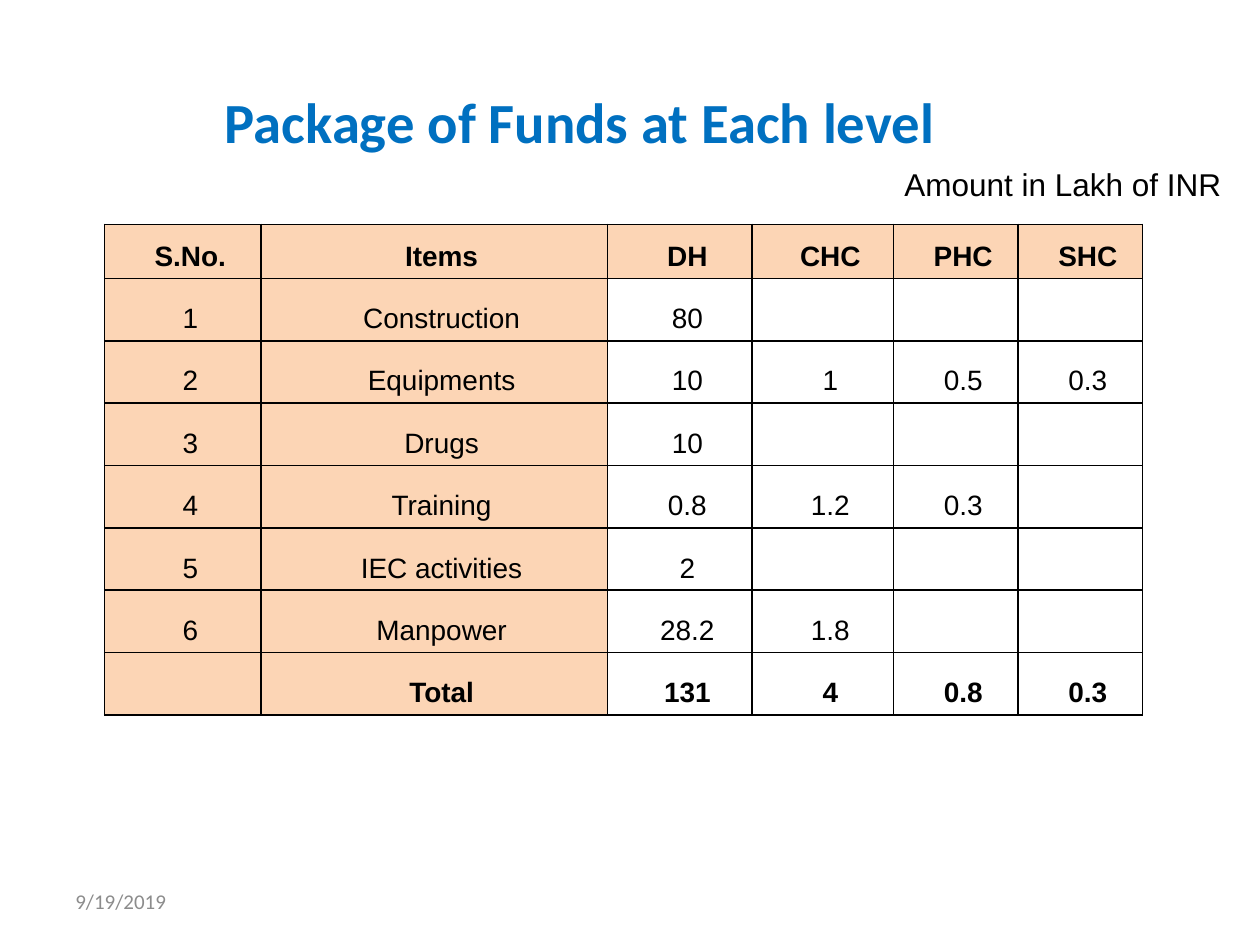
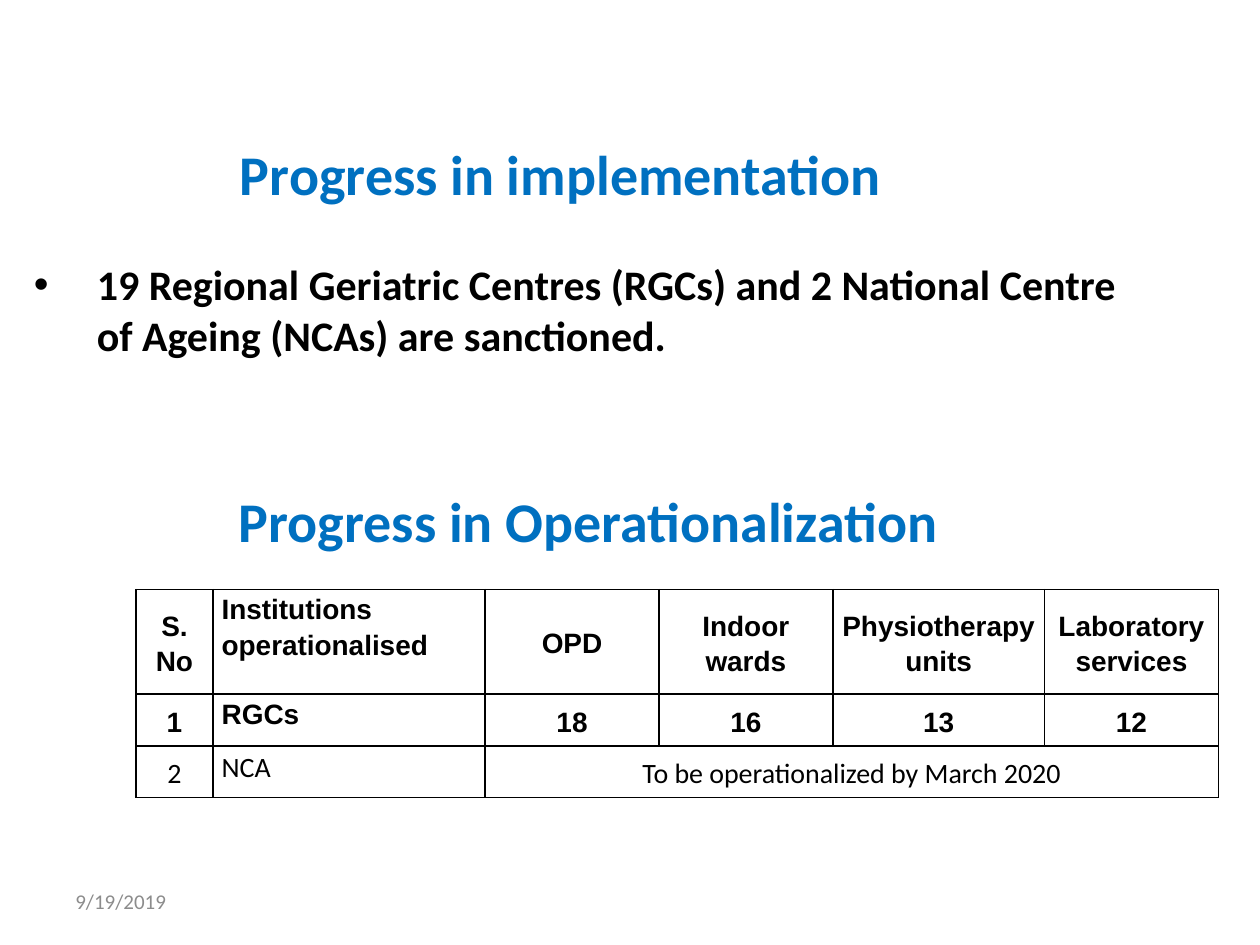
from lxml.etree import SubElement
from pptx import Presentation
from pptx.dml.color import RGBColor
from pptx.enum.text import MSO_ANCHOR, PP_ALIGN
from pptx.oxml.ns import qn
from pptx.util import Inches, Pt

COLORS = {"title": "0070C0", "text": "000000", "date": "8C8C8C", "label": "FCD5B5"}
HEADING_FONT, TABLE_FONT = "Calibri", "Arial"
DATE = "9/19/2019"

FUNDS_TITLE = "Package of Funds at Each level"
FUNDS_UNIT = "Amount in Lakh of INR"
FUNDS_WIDTHS = [1.24, 2.75, 1.15, 1.12, 0.99, 0.99]
FUNDS_HEIGHTS = [0.43] + [0.495] * 7
FUNDS = [
    ("S.No.", "Items", "DH", "CHC", "PHC", "SHC"),
    ("1", "Construction", "80", "", "", ""),
    ("2", "Equipments", "10", "1", "0.5", "0.3"),
    ("3", "Drugs", "10", "", "", ""),
    ("4", "Training", "0.8", "1.2", "0.3", ""),
    ("5", "IEC activities", "2", "", "", ""),
    ("6", "Manpower", "28.2", "1.8", "", ""),
    ("", "Total", "131", "4", "0.8", "0.3"),
]

PROGRESS_TITLE = "Progress in implementation "
PROGRESS_BULLET = (
    "19 Regional Geriatric Centres (RGCs) and 2 National Centre "
    "of Ageing (NCAs) are sanctioned."
)
OPERATION_TITLE = "Progress in Operationalization"
OPERATION_WIDTHS = [0.61, 2.16, 1.38, 1.38, 1.68, 1.38]
OPERATION_HEIGHTS = [0.83, 0.41, 0.41]
OPERATION = [
    ("S. No", "Institutions operationalised", "OPD", "Indoor wards",
     "Physiotherapy units", "Laboratory services"),
    ("1", "RGCs", "18", "16", "13", "12"),
    ("2", "NCA", "To be operationalized by March 2020", "", "", ""),
]


def style_font(paragraph, size, font_name, color="text", bold=False):
    for run in paragraph.runs:
        run.font.size = Pt(size)
        run.font.name = font_name
        run.font.bold = bold
        run.font.color.rgb = RGBColor.from_string(COLORS[color])


def set_indent(paragraph, left, first_line):
    properties = paragraph._p.get_or_add_pPr()
    properties.set("marL", str(Inches(left)))
    properties.set("indent", str(Inches(first_line)))
    return properties


def place_text(shape, box, text, anchor=MSO_ANCHOR.MIDDLE):
    """Position a text shape, fill it and return its paragraph."""
    shape.left, shape.top, shape.width, shape.height = map(Inches, box)
    frame = shape.text_frame
    frame.word_wrap = True
    frame.vertical_anchor = anchor
    frame.text = text
    return frame.paragraphs[0]


def add_text(slide, box, text, anchor=MSO_ANCHOR.MIDDLE):
    return place_text(slide.shapes.add_textbox(0, 0, 0, 0), box, text, anchor)


def style_heading(paragraph, size=32):
    paragraph.alignment = PP_ALIGN.CENTER
    style_font(paragraph, size, HEADING_FONT, "title", bold=True)


def add_slide(presentation, title, title_box, title_size=32):
    slide = presentation.slides.add_slide(presentation.slide_layouts[5])
    style_heading(place_text(slide.shapes.title, title_box, title), title_size)
    date = add_text(slide, (0.5, 6.95, 2.33, 0.4), DATE)
    style_font(date, 12, HEADING_FONT, "date")
    return slide


def add_borders(cell):
    properties = cell._tc.get_or_add_tcPr()
    for side in ("a:lnL", "a:lnR", "a:lnT", "a:lnB"):
        line = SubElement(properties, qn(side), w=str(Pt(1)))
        fill = SubElement(line, qn("a:solidFill"))
        SubElement(fill, qn("a:srgbClr"), val=COLORS["text"])


def add_grid(slide, left, top, widths, heights, rows, style_cell):
    """Add a bordered table; style_cell(cell, row, column) formats each cell."""
    table = slide.shapes.add_table(
        len(rows), len(widths), Inches(left), Inches(top),
        Inches(sum(widths)), Inches(sum(heights)),
    ).table
    table.first_row = table.horz_banding = False
    for column, width in zip(table.columns, widths):
        column.width = Inches(width)
    for row, height in zip(table.rows, heights):
        row.height = Inches(height)
    for row_index, values in enumerate(rows):
        for column_index, value in enumerate(values):
            cell = table.cell(row_index, column_index)
            cell.text = value
            add_borders(cell)
            cell.fill.background()
            style_cell(cell, row_index, column_index)
    return table


def style_funds_cell(cell, row, column):
    cell.vertical_anchor = MSO_ANCHOR.BOTTOM
    if row == 0 or column < 2:
        cell.fill.solid()
        cell.fill.fore_color.rgb = RGBColor.from_string(COLORS["label"])
    paragraph = cell.text_frame.paragraphs[0]
    paragraph.alignment = PP_ALIGN.CENTER
    set_indent(paragraph, 0.4, -0.28)
    style_font(paragraph, 16, TABLE_FONT, bold=row in (0, len(FUNDS) - 1))


def style_operation_cell(cell, row, column):
    is_name = column == 1
    cell.vertical_anchor = MSO_ANCHOR.TOP if is_name else MSO_ANCHOR.MIDDLE
    cell.margin_left = cell.margin_right = Inches(0.07)
    cell.margin_top = cell.margin_bottom = 0
    paragraph = cell.text_frame.paragraphs[0]
    paragraph.alignment = PP_ALIGN.LEFT if is_name else PP_ALIGN.CENTER
    paragraph.line_spacing = 1.15
    is_pending = row == len(OPERATION) - 1
    style_font(paragraph, 16, HEADING_FONT if is_pending else TABLE_FONT, bold=not is_pending)


def build_funds_slide(presentation):
    slide = add_slide(presentation, FUNDS_TITLE, (0.1, 0.5, 9, 0.92), 32.4)
    add_grid(slide, 0.83, 1.78, FUNDS_WIDTHS, FUNDS_HEIGHTS, FUNDS, style_funds_cell)
    unit = add_text(slide, (7.08, 1.26, 2.9, 0.4), FUNDS_UNIT, MSO_ANCHOR.TOP)
    style_font(unit, 18, TABLE_FONT)


def build_progress_slide(presentation):
    slide = add_slide(presentation, PROGRESS_TITLE, (0, 1, 9, 0.75))
    style_heading(add_text(slide, (0.17, 3.75, 9, 0.75), OPERATION_TITLE))
    table = add_grid(slide, 1.08, 4.68, OPERATION_WIDTHS, OPERATION_HEIGHTS,
                     OPERATION, style_operation_cell)
    table.cell(2, 2).merge(table.cell(2, 5))
    bullet = add_text(slide, (0.17, 1.83, 9, 1.25), PROGRESS_BULLET)
    properties = set_indent(bullet, 0.5, -0.5)
    SubElement(properties, qn("a:buFont"), typeface=TABLE_FONT)
    SubElement(properties, qn("a:buChar"), char="•")
    style_font(bullet, 24, HEADING_FONT, bold=True)


def main():
    presentation = Presentation()
    presentation.slide_width, presentation.slide_height = Inches(10), Inches(7.5)
    build_funds_slide(presentation)
    build_progress_slide(presentation)
    presentation.save("out.pptx")


if __name__ == "__main__":
    main()
